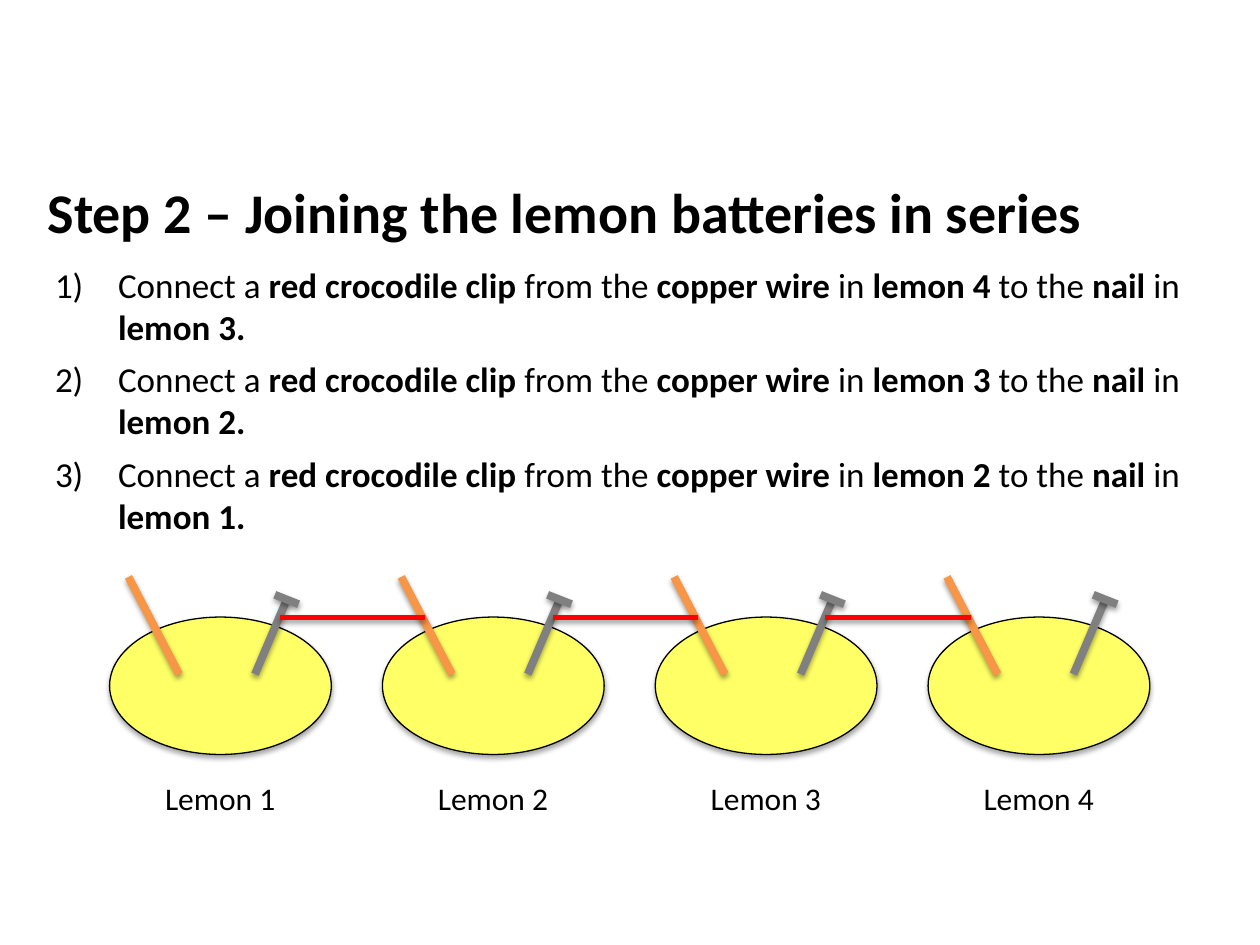
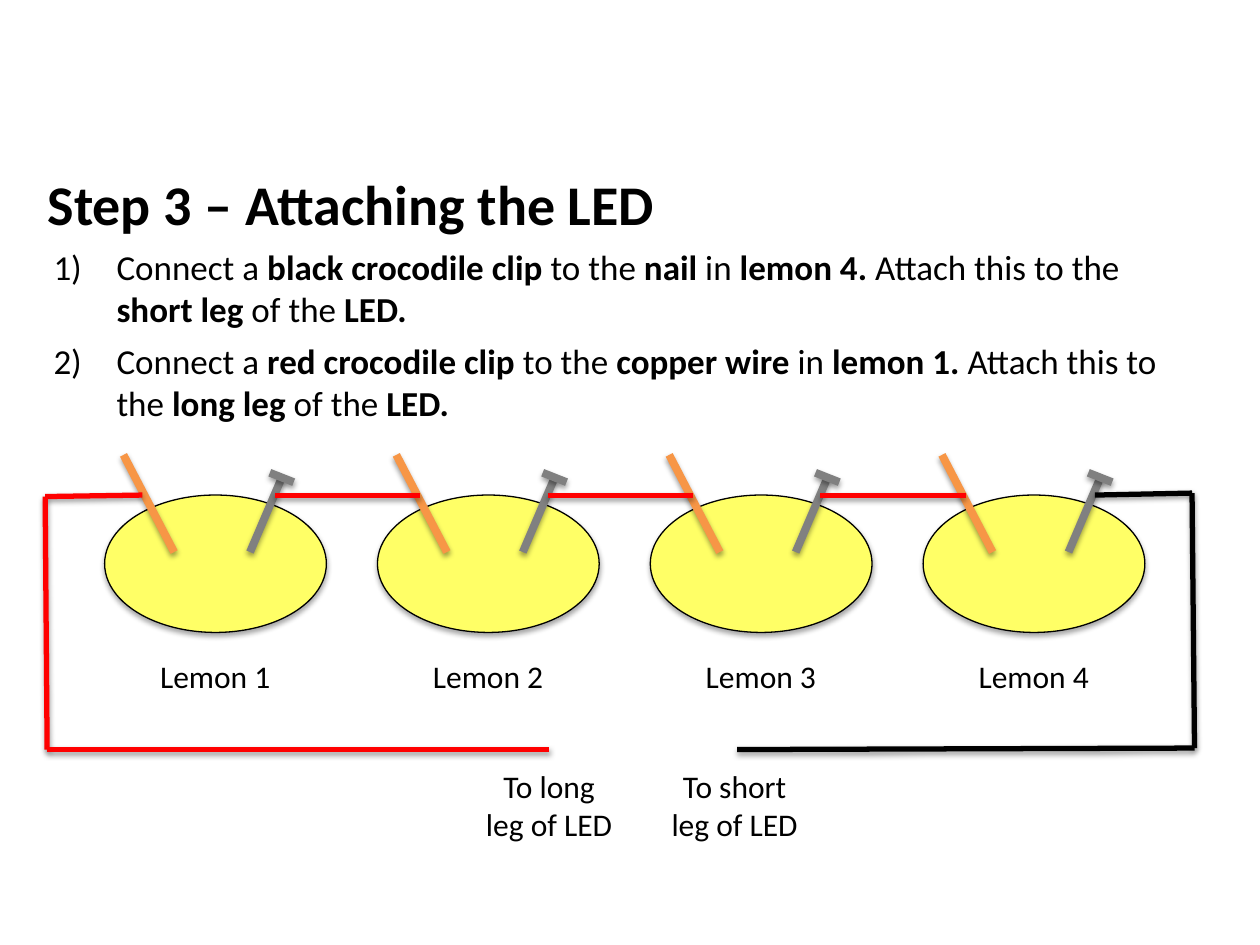
from lxml import etree
from pptx import Presentation
from pptx.dml.color import RGBColor
from pptx.enum.shapes import MSO_CONNECTOR, MSO_SHAPE
from pptx.enum.text import PP_ALIGN
from pptx.oxml.ns import qn
from pptx.util import Cm, Pt

LINE = MSO_CONNECTOR.STRAIGHT
OVAL = MSO_SHAPE.OVAL
LEFT, MID = PP_ALIGN.LEFT, PP_ALIGN.CENTER

FONT = "Calibri"
BLACK, RED = "000000", "FF0000"
YELLOW, COPPER, STEEL = "FFFF66", "F79646", "808080"
COUNT, PITCH = 4, 5.5  # lemons in a row and the step between them, in cm


def color(code):
    return RGBColor.from_string(code)


def shade(shape, dist, alpha):
    """Give a shape or connector a soft shadow straight below it."""
    props = shape._element.spPr
    effects = etree.SubElement(props, qn("a:effectLst"))
    outer = etree.SubElement(
        effects, qn("a:outerShdw"), blurRad=str(Pt(3.1)), dist=str(Pt(dist)),
        dir="5400000", rotWithShape="0")
    black = etree.SubElement(outer, qn("a:srgbClr"), val=BLACK)
    etree.SubElement(black, qn("a:alpha"), val=str(alpha * 1000))


def number(para):
    """Number a paragraph 1), 2), ... with a hanging indent."""
    props = para._p.get_or_add_pPr()
    props.set("marL", str(Cm(1.27)))
    props.set("indent", str(Cm(-1.27)))
    etree.SubElement(props, qn("a:buFont"), typeface="+mj-lt")
    etree.SubElement(props, qn("a:buAutoNum"), type="arabicParenR")
    para.space_after = Pt(6)


def write(slide, text, box, size=18, bold=False, align=LEFT, steps=False):
    """Add a text box; parts between asterisks are bold."""
    frame = slide.shapes.add_textbox(*map(Cm, box)).text_frame
    frame.word_wrap = True
    for i, line in enumerate(text.split("\n")):
        para = frame.add_paragraph() if i else frame.paragraphs[0]
        para.alignment = align
        if steps:
            number(para)
        for j, part in enumerate(line.split("*")):
            if part:
                run = para.add_run()
                run.text = part
                font = run.font
                font.name, font.size = FONT, Pt(size)
                font.bold = bold or j % 2 == 1
                font.color.rgb = color(BLACK)


def draw(slide, start, end, code, width=3):
    line = slide.shapes.add_connector(LINE, *map(Cm, (*start, *end)))
    line.line.color.rgb = color(code)
    line.line.width = Pt(width)
    shade(line, 1.6, 38)


def lemon(slide, x, y):
    """One lemon with its copper wire and nail."""
    body = slide.shapes.add_shape(OVAL, Cm(x), Cm(y + 0.81), Cm(4.47), Cm(2.77))
    body.fill.solid()
    body.fill.fore_color.rgb = color(YELLOW)
    body.line.color.rgb = color(BLACK)
    body.line.width = Pt(0.75)
    shade(body, 1.8, 35)
    pins = [
        (0.38, 0, 1.4, 1.96, COPPER),
        (2.93, 1.96, 3.57, 0.46, STEEL),
        (3.33, 0.36, 3.81, 0.55, STEEL),
    ]
    for x1, y1, x2, y2, code in pins:
        draw(slide, (x + x1, y + y1), (x + x2, y + y2), code, 4.5)


def battery(slide, x, y):
    """The row of lemons, the clips that join them and their labels."""
    lefts = [x + i * PITCH for i in range(COUNT)]
    for left in lefts:
        lemon(slide, left, y)
    for left in lefts[:-1]:
        draw(slide, (left + 3.43, y + 0.82),
             (left + PITCH + 0.86, y + 0.82), RED)
    for i, left in enumerate(lefts, 1):
        write(slide, f"Lemon {i}", (left + 0.73, y + 3.95, 3, 1.02), align=MID)


def lead(slide, points, code):
    """A wire that runs through the given points."""
    for start, end in zip(points, points[1:]):
        draw(slide, start, end, code)


def page(deck, title, top, steps, box, row):
    """A step slide: title, numbered steps and the lemon battery."""
    slide = deck.slides.add_slide(deck.slide_layouts[6])
    write(slide, title, (0.71, top, 21.39, 1.62), size=32, bold=True)
    write(slide, "\n".join(steps), box, size=20, steps=True)
    battery(slide, *row)
    return slide


def series(deck):
    steps = [
        f"Connect a *red crocodile clip* from the *copper wire* in "
        f"*lemon {n}* to the *nail* in *lemon {n - 1}.*"
        for n in range(COUNT, 1, -1)
    ]
    page(deck, "Step 2 – Joining the lemon batteries in series", 3.45,
         steps, (0.86, 5.18, 23.27, 8.28), (2.21, 11.63))


def light(deck):
    steps = [
        "Connect a *black crocodile clip* to the *nail* in *lemon 4.* "
        "Attach this to the *short leg* of the *LED.*",
        "Connect a *red crocodile clip* to the *copper wire* in *lemon 1.* "
        "Attach this to the *long leg* of the *LED.*",
    ]
    slide = page(deck, "Step 3 – Attaching the LED", 3.3,
                 steps, (0.83, 4.82, 23.27, 3.89), (2.11, 9.17))
    # Wires from both ends of the battery to the LED
    lead(slide, [(2.87, 9.98), (0.91, 10.01), (0.95, 15.11), (11.07, 15.11)], RED)
    lead(slide, [(22.07, 9.98), (24.03, 9.94), (24.08, 15.08), (14.86, 15.11)], BLACK)
    for leg, left in (("long", 9.52), ("short", 13.26)):
        write(slide, f"To {leg} leg of LED", (left, 15.34, 3.1, 1.8), align=MID)


def main():
    deck = Presentation()
    deck.slide_width, deck.slide_height = Cm(25.4), Cm(19.05)
    series(deck)
    light(deck)
    deck.save("out.pptx")


if __name__ == "__main__":
    main()
